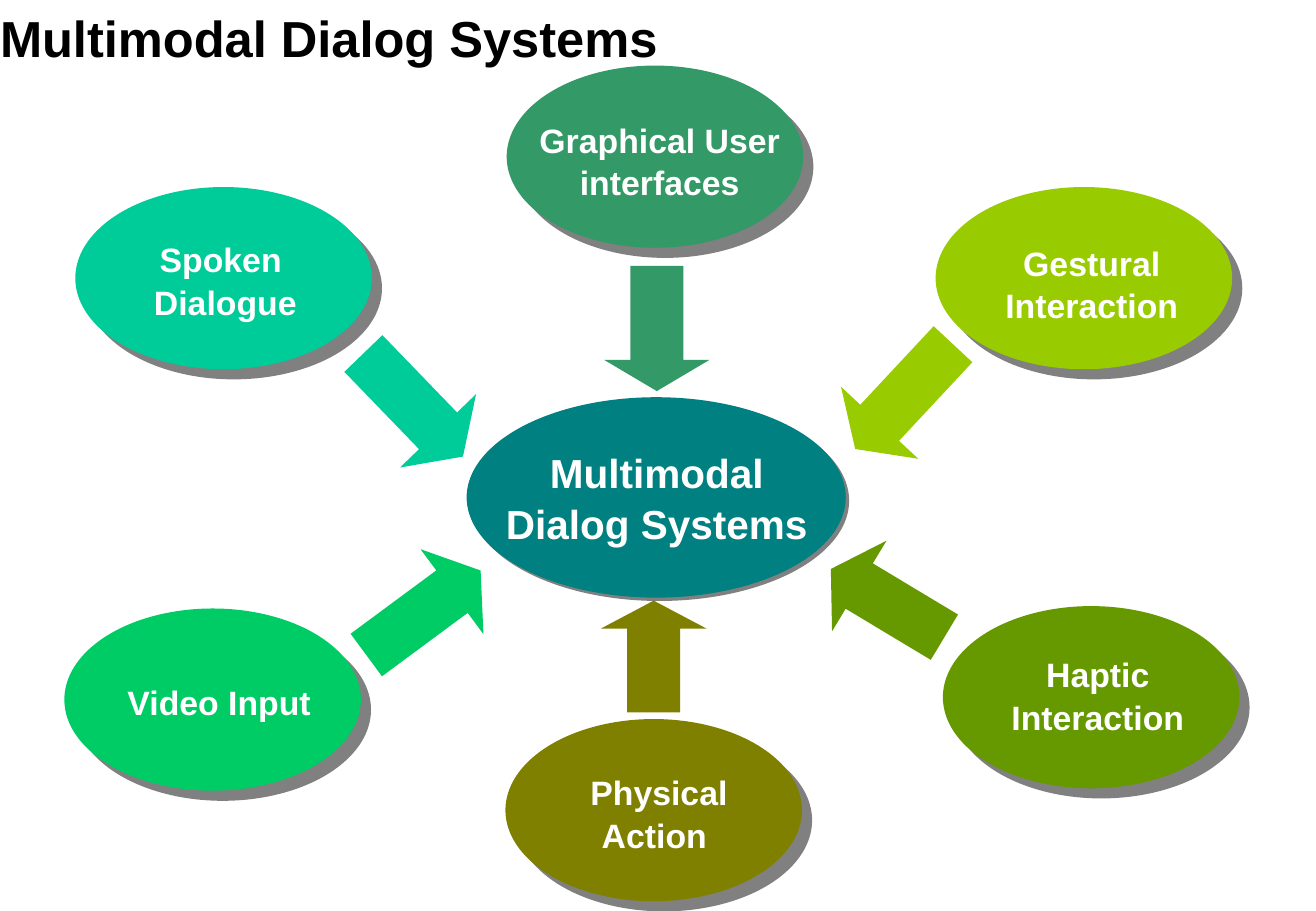
from lxml import etree
from pptx import Presentation
from pptx.dml.color import RGBColor
from pptx.enum.shapes import MSO_SHAPE
from pptx.enum.text import MSO_ANCHOR, PP_ALIGN
from pptx.oxml.ns import qn
from pptx.util import Pt

PX = 9144  # EMU per px, 100 px to the inch
FONT = "Arial"
BLACK = RGBColor(0x00, 0x00, 0x00)
WHITE = RGBColor(0xFF, 0xFF, 0xFF)
TEAL = RGBColor(0x00, 0x80, 0x80)
MINT = RGBColor(0x00, 0xCC, 0x99)
SEA_GREEN = RGBColor(0x33, 0x99, 0x66)
LIME = RGBColor(0x99, 0xCC, 0x00)
LEAF = RGBColor(0x66, 0x99, 0x00)
EMERALD = RGBColor(0x00, 0xCC, 0x66)
OLIVE = RGBColor(0x80, 0x80, 0x00)
SHADOW = RGBColor(0x80, 0x80, 0x80)

MODE_WIDTH, MODE_HEIGHT = 244, 150
ARROW_HEIGHT = 87
LABEL_HEIGHT = 77

# Ellipse corner, colour, label lines, label (dx, dy, width),
# arrow (dx, dy, length), arrow angle; offsets count from the ellipse corner
MODES = [
    ((62, 154), MINT, ["Spoken ", "Dialogue"],
     (14, 36, 219), (219, 136, 118), 46),
    ((417, 54), SEA_GREEN, ["Graphical User", "interfaces"],
     (3, 38, 246), (72, 173, 103), 90),
    ((770, 154), LIME, ["Gestural", "Interaction"],
     (21, 39, 215), (-85, 129, 118), 133),
    ((776, 499), LEAF, [" Haptic ", "Interaction"],
     (20, 33, 215), (-100, -46, 109), 211),
    ((53, 501), EMERALD, [" Video Input"],
     (16, 54, 215), (237, -40, 117), 323.5),
    ((416, 592), OLIVE, [" Physical", "Action"],
     (15, 37, 215), (76, -95, 92), 270),
]


def to_emu(*lengths):
    return [length * PX for length in lengths]


def add_filled(shapes, kind, box, color):
    shape = shapes.add_shape(kind, *to_emu(*box))
    shape.fill.solid()
    shape.fill.fore_color.rgb = color
    shape.line.fill.background()
    shape.shadow.inherit = False
    return shape


def add_ellipse(shapes, box, color, shadow_distance):
    ellipse = add_filled(shapes, MSO_SHAPE.OVAL, box, color)
    effects = ellipse.element.spPr.find(qn("a:effectLst"))
    shadow = etree.SubElement(
        effects, qn("a:outerShdw"), dist=str(Pt(shadow_distance)),
        dir="2700000", algn="ctr", rotWithShape="0")
    etree.SubElement(shadow, qn("a:srgbClr"), val=str(SHADOW))


def add_text(shapes, box, lines, size, color=WHITE, align=PP_ALIGN.CENTER):
    frame = shapes.add_textbox(*to_emu(*box)).text_frame
    frame.word_wrap = True
    frame.text = "\n".join(lines)
    for paragraph in frame.paragraphs:
        paragraph.alignment = align
        paragraph.line_spacing = 1.05
        paragraph.font.name = FONT
        paragraph.font.size = Pt(size)
        paragraph.font.bold = True
        paragraph.font.color.rgb = color
    return frame


def add_title(slide, box):
    frame = add_text(slide.shapes, box, ["Multimodal Dialog Systems"], 30,
                     BLACK, PP_ALIGN.LEFT)
    frame.vertical_anchor = MSO_ANCHOR.MIDDLE
    frame.margin_left = frame.margin_top = 0


def add_hub(slide, box):
    left, top, _, _ = box
    add_ellipse(slide.shapes, box, TEAL, 2.8)
    add_text(slide.shapes, (left + 18, top + 35, 277, 91),
             ["Multimodal", "Dialog Systems"], 24)


def add_mode(slide, box, color, lines, label, arrow, angle):
    """One input mode: ellipse, label and the arrow towards the hub."""
    left, top, _, _ = box
    shapes = slide.shapes.add_group_shape().shapes
    add_ellipse(shapes, box, color, 8.5)

    label_x, label_y, label_width = label
    add_text(shapes, (left + label_x, top + label_y, label_width, LABEL_HEIGHT),
             lines, 20)

    arrow_x, arrow_y, length = arrow
    shape = add_filled(shapes, MSO_SHAPE.RIGHT_ARROW,
                       (left + arrow_x, top + arrow_y, length, ARROW_HEIGHT), color)
    shape.rotation = angle
    # The head takes a quarter of the arrow's length
    shape.adjustments[1] = length / 4 / ARROW_HEIGHT


def main():
    presentation = Presentation()
    presentation.slide_width, presentation.slide_height = to_emu(1083, 750)
    slide = presentation.slides.add_slide(presentation.slide_layouts[6])

    add_title(slide, (0, 0, 1079, 64))
    add_hub(slide, (384, 327, 312, 165))
    for corner, *details in MODES:
        add_mode(slide, (*corner, MODE_WIDTH, MODE_HEIGHT), *details)

    presentation.save("out.pptx")


if __name__ == "__main__":
    main()
